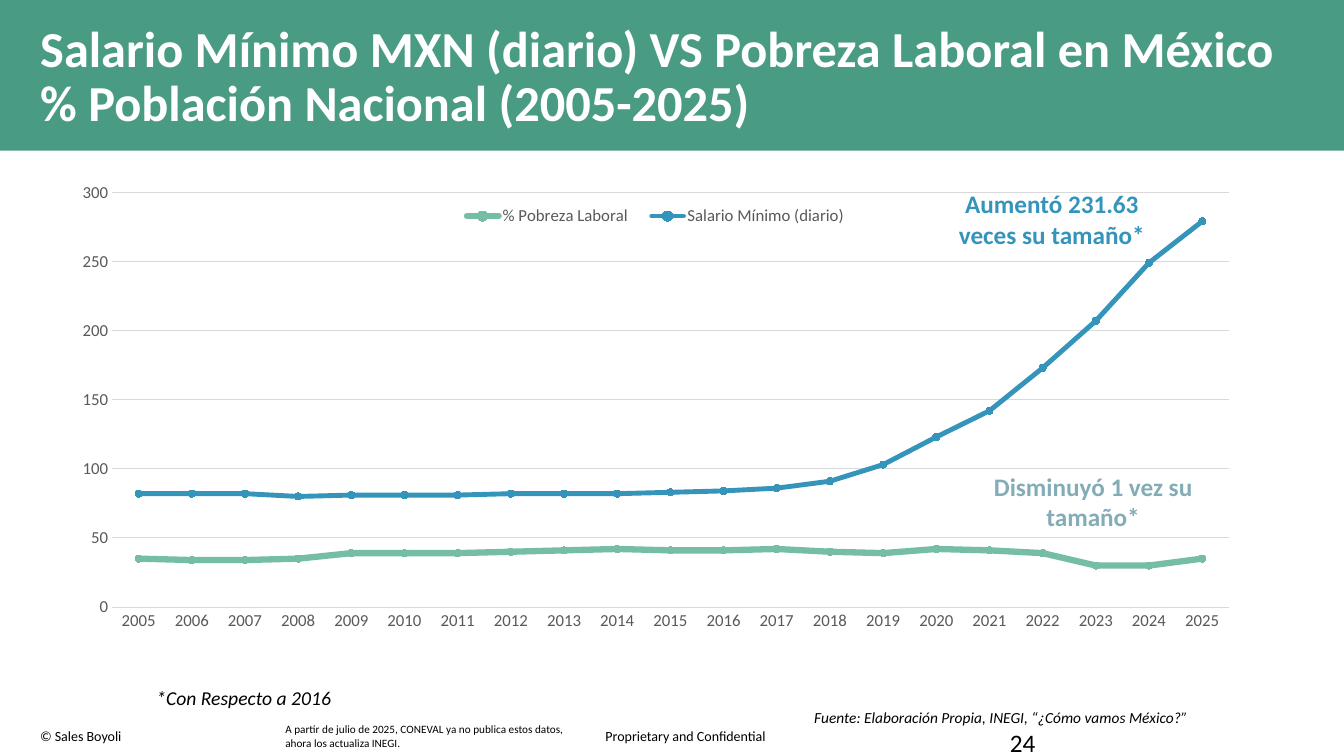
from lxml.etree import SubElement
from pptx import Presentation
from pptx.chart.data import CategoryChartData
from pptx.dml.color import RGBColor
from pptx.enum.chart import XL_CHART_TYPE, XL_LEGEND_POSITION, XL_MARKER_STYLE, XL_TICK_MARK
from pptx.enum.shapes import MSO_SHAPE
from pptx.enum.text import MSO_ANCHOR, PP_ALIGN
from pptx.oxml.ns import qn
from pptx.util import Cm, Pt

FONT = "Calibri"
BLACK, WHITE, GRAY, GRID = "000000", "FFFFFF", "595959", "D9D9D9"
GREEN, BLUE, MINT, TEAL, MIST = "4A9B83", "3494BA", "75BDA7", "58B6C0", "84ACB6"

HEADLINE = "Salario Mínimo MXN (diario) VS Pobreza Laboral en México % Población Nacional (2005-2025)"
YEARS = [str(year) for year in range(2005, 2026)]
SERIES = [
    ("Salario Mínimo (diario)", BLUE, BLUE, 3.5,
     [82, 82, 82, 80, 81, 81, 81, 82, 82, 82, 83, 84, 86, 91, 103, 123, 142, 173, 207, 249, 279]),
    ("% Pobreza Laboral", MINT, TEAL, 4.5,
     [35, 34, 34, 35, 39, 39, 39, 40, 41, 42, 41, 41, 42, 40, 39, 42, 41, 39, 30, 30, 35]),
]
PLOT_AREA = {"x": 0.045, "y": 0.04, "w": 0.935, "h": 0.823}
LEGEND_AREA = {"x": 0.327, "y": 0.062, "w": 0.346, "h": 0.05}

CALLOUTS = [
    ("Aumentó 231.63 veces su tamaño*", (23.41, 4.63, 6.2, 1.8), BLUE),
    ("Disminuyó 1 vez su tamaño*", (24.45, 11.75, 6.2, 1.8), MIST),
]
NOTES = [
    ("*Con Respecto a 2016", (3.69, 17.15, 7.44, 0.86), 14),
    ("Fuente: Elaboración Propia, INEGI, “¿Cómo vamos México?”", (20.27, 17.73, 12.47, 0.74), 11),
]
FOOTERS = [
    (["Proprietary and Confidential"], (15.01, 18.21, 4.6, 0.69), 10, False),
    (["© Sales Boyoli"], (0.76, 18.2, 8.56, 0.69), 10, True),
    (["24"], (25.2, 18.21, 7.9, 0.64), 18, True),
    (["A partir de julio de 2025, CONEVAL ya no publica estos datos,",
      "ahora los actualiza INEGI."], (6.94, 18.08, 7.59, 0.94), 8, False),
]


def rgb(value):
    return RGBColor.from_string(value)


def style(font, size, color, bold=False, italic=False):
    font.name, font.size, font.bold, font.italic = FONT, Pt(size), bold, italic
    font.color.rgb = rgb(color)


def add_text(slide, lines, place, size, color=BLACK, wrap=True, align=PP_ALIGN.LEFT, **weight):
    frame = slide.shapes.add_textbox(*map(Cm, place)).text_frame
    frame.word_wrap = wrap
    frame.text = "\n".join(lines)
    for paragraph in frame.paragraphs:
        paragraph.alignment = align
        style(paragraph.font, size, color, **weight)


def manual_layout(parent, area, inner=False):
    layout = parent.find(qn("c:layout"))
    if layout is None:
        layout = parent.makeelement(qn("c:layout"))
        parent.insert(1 if parent.tag == qn("c:legend") else 0, layout)
    for child in list(layout):
        layout.remove(child)
    manual = SubElement(layout, qn("c:manualLayout"))
    if inner:
        SubElement(manual, qn("c:layoutTarget"), val="inner")
    for side in "xy":
        SubElement(manual, qn(f"c:{side}Mode"), val="edge")
    for side, share in area.items():
        SubElement(manual, qn(f"c:{side}"), val=str(share))


def add_wage_chart(slide):
    data = CategoryChartData()
    data.categories = YEARS
    for name, *_, values in SERIES:
        data.add_series(name, values)
    place = map(Cm, (1.47, 4.34, 30.1, 12.7))
    chart = slide.shapes.add_chart(XL_CHART_TYPE.LINE_MARKERS, *place, data).chart
    style(chart.font, 10, BLACK)
    chart.has_title = False
    chart.plots[0].vary_by_categories = False

    for series, (_, color, marker_color, width, _) in zip(chart.plots[0].series, SERIES):
        series.smooth = False
        series.format.line.color.rgb = rgb(color)
        series.format.line.width = Pt(width)
        series._element.find(qn("c:spPr")).find(qn("a:ln")).set("cap", "rnd")
        marker = series.marker
        marker.style, marker.size = XL_MARKER_STYLE.CIRCLE, 5
        marker.format.fill.solid()
        marker.format.fill.fore_color.rgb = rgb(marker_color)
        marker.format.line.color.rgb = rgb(marker_color)
    wage, poverty = chart.plots[0].series
    wage._element.addprevious(poverty._element)

    years, amounts = chart.category_axis, chart.value_axis
    for axis in (years, amounts):
        axis.major_tick_mark = axis.minor_tick_mark = XL_TICK_MARK.NONE
        style(axis.tick_labels.font, 12, GRAY)
    amounts.minimum_scale, amounts.maximum_scale, amounts.major_unit = 0, 300, 50
    amounts.format.line.fill.background()
    for line in (years.format.line, amounts.major_gridlines.format.line):
        line.color.rgb = rgb(GRID)
        line.width = Pt(0.75)

    chart.has_legend = True
    legend = chart.legend
    legend.position = XL_LEGEND_POSITION.BOTTOM
    legend.include_in_layout = False
    style(legend.font, 12, GRAY)
    manual_layout(legend._element, LEGEND_AREA)
    manual_layout(chart._chartSpace.chart.plotArea, PLOT_AREA, inner=True)


def add_header(slide):
    banner = slide.shapes.add_shape(MSO_SHAPE.RECTANGLE, 0, 0, Cm(33.87), Cm(3.8))
    banner.shadow.inherit = False
    banner.fill.solid()
    banner.fill.fore_color.rgb = rgb(GREEN)
    banner.line.fill.background()

    title = slide.shapes.title
    title.element.addprevious(banner.element)
    title.left, title.top, title.width, title.height = map(Cm, (0.76, 0.36, 32.31, 3.23))
    title.text_frame.text = HEADLINE
    title.text_frame.word_wrap = True
    title.text_frame.vertical_anchor = MSO_ANCHOR.MIDDLE
    paragraph = title.text_frame.paragraphs[0]
    paragraph.alignment = PP_ALIGN.LEFT
    paragraph.line_spacing = 0.9
    style(paragraph.font, 36, WHITE, bold=True)


def main():
    deck = Presentation()
    deck.slide_width, deck.slide_height = Cm(33.87), Cm(19.05)
    slide = deck.slides.add_slide(deck.slide_layouts[5])
    add_header(slide)
    add_wage_chart(slide)
    for text, place, color in CALLOUTS:
        add_text(slide, [text], place, 18, color, align=PP_ALIGN.CENTER, bold=True)
    for text, place, size in NOTES:
        add_text(slide, [text], place, size, italic=True)
    for lines, place, size, wrap in FOOTERS:
        add_text(slide, lines, place, size, wrap=wrap)
    deck.save("out.pptx")


if __name__ == "__main__":
    main()
